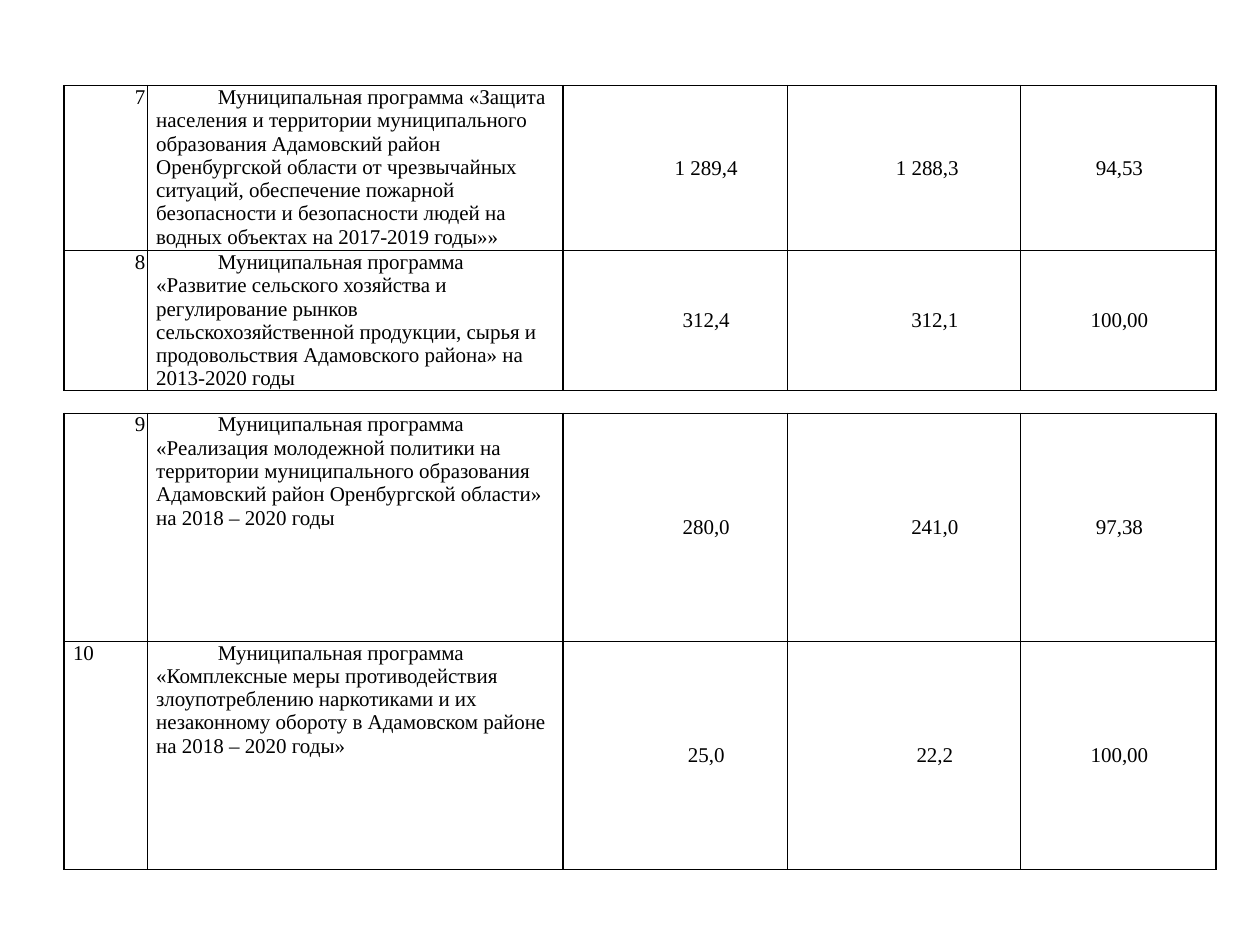
from lxml import etree
from pptx import Presentation
from pptx import util as u
from pptx.dml import color
from pptx.enum import text
from pptx.oxml import ns

COLORS = {"ink": "000000"}
COLUMN_SHARES = [0.066, 0.33, 0.178, 0.185, 0.155]
LEFT_SHARE = 0.051
FIRST_LINE, RATIO_LINE = 0.49, 0.02

EARLIER_PROGRAMMES = [
    ("7", "Муниципальная программа «Защита населения и территории муниципального "
     "образования Адамовский район Оренбургской области от чрезвычайных ситуаций, "
     "обеспечение пожарной безопасности и безопасности людей на водных объектах "
     "на 2017-2019 годы»»", "1\u00a0289,4", "1\u00a0288,3", "94,53"),
    ("8", "Муниципальная программа «Развитие сельского хозяйства и регулирование "
     "рынков сельскохозяйственной продукции, сырья и продовольствия Адамовского "
     "района» на 2013-2020 годы", "312,4", "312,1", "100,00"),
]
LATER_PROGRAMMES = [
    ("9", "Муниципальная программа «Реализация молодежной политики на территории "
     "муниципального образования Адамовский район Оренбургской области» "
     "на 2018 – 2020 годы", "280,0", "241,0", "97,38"),
    ("10", "Муниципальная программа «Комплексные меры противодействия злоупотреблению "
     "наркотиками и их незаконному обороту в Адамовском районе на 2018 – 2020 годы»",
     "25,0", "22,2", "100,00"),
]


class ProgrammeSlide:
    """Holds the style and the current slide, and draws programme tables on it."""

    font = "Times New Roman"
    size = u.Pt(12)
    inset = u.Inches(0.07)

    def __init__(self, deck):
        self.width, self.height = deck.slide_width, deck.slide_height
        self.slide = deck.slides.add_slide(deck.slide_layouts[6])

    def table(self, top, row_shares, programmes):
        frame = self.slide.shapes.add_table(
            len(programmes), len(COLUMN_SHARES),
            round(LEFT_SHARE * self.width), round(top * self.height),
            round(sum(COLUMN_SHARES) * self.width),
            round(sum(row_shares) * self.height))
        table = frame.table
        table.first_row = table.horz_banding = False
        for column, share in zip(table.columns, COLUMN_SHARES):
            column.width = round(share * self.width)
        for row, share, programme in zip(table.rows, row_shares, programmes):
            row.height = round(share * self.height)
            for position, (cell, words) in enumerate(zip(row.cells, programme)):
                self.cell(cell, words, position)
        return table

    def cell(self, cell, words, position):
        cell.margin_left = cell.margin_right = self.inset
        cell.margin_top = cell.margin_bottom = 0
        self.borders(cell)
        cell.fill.background()
        paragraph = cell.text_frame.paragraphs[0]
        paragraph.text = words
        if position >= 2:
            cell.vertical_anchor = text.MSO_ANCHOR.MIDDLE
            paragraph.alignment = text.PP_ALIGN.CENTER
        indent = RATIO_LINE if position == 4 else 0 if words == "10" else FIRST_LINE
        properties = paragraph._p.get_or_add_pPr()
        properties.set("marL", "0")
        properties.set("indent", str(u.Inches(indent)))
        paragraph.font.name = self.font
        paragraph.font.size = self.size
        paragraph.font.color.rgb = color.RGBColor.from_string(COLORS["ink"])

    def borders(self, cell):
        properties = cell._tc.get_or_add_tcPr()
        for side in ("lnL", "lnR", "lnT", "lnB"):
            line = etree.SubElement(properties, ns.qn(f"a:{side}"), w=str(u.Pt(1)))
            fill = etree.SubElement(line, ns.qn("a:solidFill"))
            etree.SubElement(fill, ns.qn("a:srgbClr"), val=COLORS["ink"])


def main():
    deck = Presentation()
    deck.slide_width, deck.slide_height = u.Inches(10), u.Inches(7.5)
    page = ProgrammeSlide(deck)
    earlier = page.table(0.68 / 7.5, [1.31 / 7.5, 1.05 / 7.5], EARLIER_PROGRAMMES)
    earlier.cell(0, 3).margin_right = u.Inches(0.19)
    page.table(3.28 / 7.5, [1.81 / 7.5] * 2, LATER_PROGRAMMES)
    deck.save("out.pptx")


if __name__ == "__main__":
    main()
